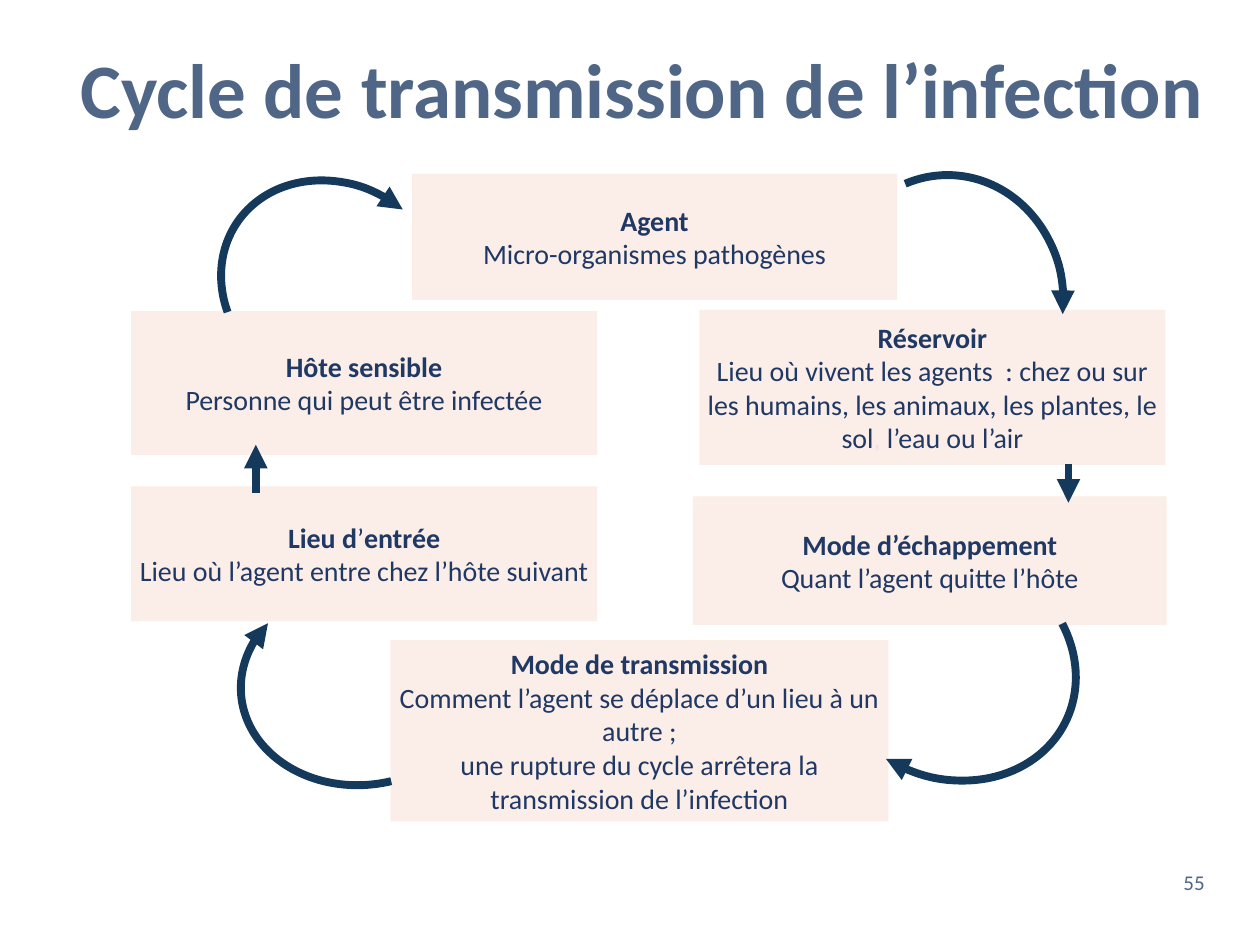
from pptx import Presentation
from pptx.util import Inches, Pt
from pptx.dml.color import RGBColor
from pptx.oxml import parse_xml
from pptx.oxml.ns import nsdecls
from pptx.enum.shapes import MSO_SHAPE as SHAPE, MSO_CONNECTOR as CONN
from pptx.enum.text import PP_ALIGN as ALIGN, MSO_ANCHOR as ANCHOR, MSO_AUTO_SIZE as FIT

COLORS = {"heading": "506687", "text": "1F3864", "pale": "E7E6E6",
          "box": "FBEDE7", "arrow": "15395B"}


def add_run(p, text, size, color, bold=False):
    r = p.add_run()
    r.text = text
    for name, value in {"name": "Calibri", "size": Pt(size), "bold": bold}.items():
        setattr(r.font, name, value)
    r.font.color.rgb = RGBColor.from_string(COLORS[color])


def style_arrow(sp):
    sp.line.color.rgb = RGBColor.from_string(COLORS["arrow"])
    sp.line.width = Pt(4.5)
    sp.line._get_or_add_ln().append(parse_xml(f'<a:tailEnd {nsdecls("a")} type="triangle"/>'))


prs = Presentation()
prs.slide_width, prs.slide_height = Inches(10), Inches(7.5)
s = prs.slides.add_slide(prs.slide_layouts[5])

title = s.shapes.title
title.left, title.top, title.width, title.height = map(Inches, (0.53, 0.38, 9.14, 0.75))
tf = title.text_frame
frame = {"margin_left": Inches(0.07), "margin_right": Inches(0.07),
         "margin_top": Inches(0.04), "margin_bottom": Inches(0.04),
         "vertical_anchor": ANCHOR.TOP, "word_wrap": True, "auto_size": FIT.NONE}
for name, value in frame.items():
    setattr(tf, name, value)
p = tf.paragraphs[0]
p.alignment, p.line_spacing = ALIGN.CENTER, 0.89
add_run(p, "Cycle de transmission de l’infection", 44, "heading", True)

number = s.shapes.add_textbox(*map(Inches, (7.33, 6.74, 2.33, 0.52)))
tf = number.text_frame
tf.word_wrap, tf.vertical_anchor = True, ANCHOR.MIDDLE
p = tf.paragraphs[0]
p.alignment = ALIGN.RIGHT
add_run(p, "55", 12, "heading")

stages = [
    ((3.27, 1.38, 3.85, 1), ["Agent"], [["Micro-organismes pathogènes"]]),
    ((5.55, 2.46, 3.7, 1.23), ["Réservoir"],
     [["Lieu où vivent les agents  : chez ou sur les humains, les animaux, les plantes, le sol",
       ", ", "l’eau ou l’air"]]),
    ((5.5, 3.94, 3.76, 1.02), ["Mode d’échappement"], [["Quant l’agent quitte l’hôte"]]),
    ((3.1, 5.08, 3.95, 1.44), ["Mode de transmission"],
     [["Comment l’agent se déplace d’un lieu à un autre ;"],
      ["une rupture du cycle arrêtera la transmission de l’infection"]]),
    ((1.04, 3.86, 3.7, 1.07), ["Lieu d", "’", "entrée"],
     [["Lieu où l’agent entre chez l’hôte suivant"]]),
    ((1.04, 2.47, 3.7, 1.14), ["Hôte sensible"], [["Personne qui peut être infectée"]]),
]
frame = {f"margin_{side}": Inches(0.06) for side in ("left", "right", "top", "bottom")}
frame.update(vertical_anchor=ANCHOR.MIDDLE, word_wrap=True)
for box, heading, details in stages:
    sp = s.shapes.add_shape(SHAPE.RECTANGLE, *map(Inches, box))
    sp.shadow.inherit = False
    sp.fill.solid()
    sp.fill.fore_color.rgb = RGBColor.from_string(COLORS["box"])
    sp.line.fill.background()
    tf = sp.text_frame
    for name, value in frame.items():
        setattr(tf, name, value)
    for i, texts in enumerate([heading] + details):
        p = tf.add_paragraph() if i else tf.paragraphs[0]
        p.alignment = ALIGN.CENTER
        for text in texts:
            add_run(p, text, 16, "pale" if text == ", " else "text", i == 0 and text != "’")

arcs = [
    ((6.6, 1.39, 1.84, 2), 0, (150.11, 3.87)),
    ((1.91, 4.63, 1.92, 1.6), 174.3, (155.24, 23.25)),
    ((6.62, 4.22, 1.8, 2.09), 116.4, (134.67, 3.87)),
    ((1.84, 1.35, 1.65, 1.89), 303.6, (134.67, 3.87)),
]
for box, rotation, angles in arcs:
    sp = s.shapes.add_shape(SHAPE.ARC, *map(Inches, box))
    sp.shadow.inherit = False
    sp.fill.background()
    sp.rotation = rotation
    sp.adjustments[0], sp.adjustments[1] = angles
    style_arrow(sp)

for x, start, end in [(8.48, 3.68, 3.99), (2.03, 3.91, 3.53)]:
    sp = s.shapes.add_connector(CONN.STRAIGHT, *map(Inches, (x, start, x, end)))
    style_arrow(sp)
    sp._element.spPr.append(parse_xml(f'<a:effectLst {nsdecls("a")}/>'))

prs.save("out.pptx")
